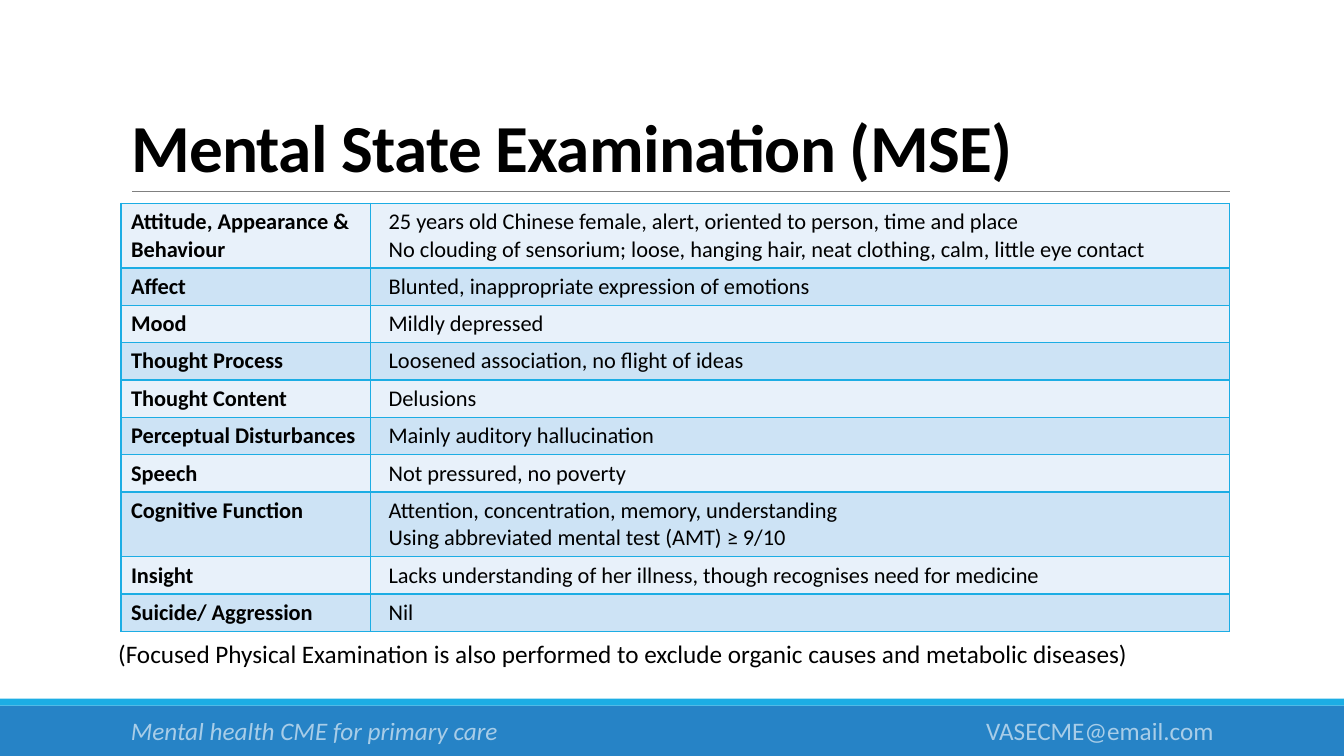
from lxml.etree import SubElement
from pptx import Presentation
from pptx.dml.color import RGBColor
from pptx.enum.shapes import MSO_CONNECTOR, MSO_SHAPE
from pptx.enum.text import MSO_ANCHOR, PP_ALIGN
from pptx.oxml.ns import qn
from pptx.util import Pt

HUES = {"ink": "000000", "white": "FFFFFF", "blue": "2683C6", "cyan": "1CADE4",
        "rule": "808080", "pale": "E8F1FA", "light": "CDE3F5"}

ROWS = [
    ("Attitude, Appearance & Behaviour",
     ["25 years old Chinese female, alert, oriented to person, time and place",
      "No clouding of sensorium; loose, hanging hair, neat clothing, calm, little eye contact"]),
    ("Affect", ["Blunted, inappropriate expression of emotions"]),
    ("Mood", ["Mildly depressed"]),
    ("Thought Process", ["Loosened association, no flight of ideas"]),
    ("Thought Content", ["Delusions"]),
    ("Perceptual Disturbances", ["Mainly auditory hallucination"]),
    ("Speech", ["Not pressured, no poverty"]),
    ("Cognitive Function",
     ["Attention, concentration, memory, understanding",
      "Using abbreviated mental test (AMT) ≥ 9/10"]),
    ("Insight", ["Lacks understanding of her illness, though recognises need for medicine"]),
    ("Suicide/ Aggression", ["Nil"]),
]


def hue(name):
    return RGBColor.from_string(HUES[name])


def write(para, text, color="ink", **style):
    run = para.add_run()
    run.text = text
    for key, val in {"name": "Calibri", "bold": False, **style}.items():
        setattr(run.font, key, val)
    run.font.color.rgb = hue(color)
    return run


def bar(slide, box, color):
    shape = slide.shapes.add_shape(MSO_SHAPE.RECTANGLE, *map(Pt, box))
    shape.shadow.inherit = False
    shape.fill.solid()
    shape.fill.fore_color.rgb = hue(color)
    shape.line.fill.background()


def label(slide, box, text, align=PP_ALIGN.LEFT, **style):
    frame = slide.shapes.add_textbox(*map(Pt, box)).text_frame
    frame.word_wrap = True
    para = frame.paragraphs[0]
    para.alignment = align
    return write(para, text, size=Pt(18), **style)


def footer(slide, box):
    x, y, w, h = box
    # Thin stripe above the main band
    bar(slide, (x, y + 5, w, h - 5), "blue")
    bar(slide, (x, y, w, 5), "cyan")
    # Translucent course name and address
    parts = [("Mental health CME for primary care", x + 86.4, 400, PP_ALIGN.LEFT, True),
             ("VASECME@email.com", x + 574, 300, PP_ALIGN.RIGHT, False)]
    for text, left, wide, align, slant in parts:
        run = label(slide, (left, y + 8.6, wide, 29), text, align,
                    color="white", italic=slant)
        tint = next(run.font._element.iter(qn("a:srgbClr")))
        SubElement(tint, qn("a:alpha"), val="60000")


def heading(slide, box):
    x, y, w, h = box
    title = slide.shapes.title
    for key, val in zip(("left", "top", "width", "height"), box):
        setattr(title, key, Pt(val))
    frame = title.text_frame
    frame.word_wrap = True
    frame.vertical_anchor = MSO_ANCHOR.BOTTOM
    para = frame.paragraphs[0]
    para.alignment = PP_ALIGN.LEFT
    para.line_spacing = 0.85
    run = write(para, "Mental State Examination (MSE)", size=Pt(48), bold=True)
    run.font._element.set("spc", "-50")
    # Rule under the title
    ends = (x + 8, y + h, x + w, y + h)
    rule = slide.shapes.add_connector(MSO_CONNECTOR.STRAIGHT, *map(Pt, ends))
    rule.line.color.rgb = hue("rule")
    rule.line.width = Pt(0.5)
    SubElement(rule._element.spPr, qn("a:effectLst"))


def border(cell):
    props = cell._tc.get_or_add_tcPr()
    for at, side in enumerate(("lnL", "lnR", "lnT", "lnB")):
        line = props.makeelement(qn("a:" + side), {"w": str(Pt(1))})
        props.insert(at, line)
        fill = SubElement(line, qn("a:solidFill"))
        SubElement(fill, qn("a:srgbClr"), val=HUES["cyan"])


def fill_in(cell, lines, color, bold, indent):
    cell.fill.solid()
    cell.fill.fore_color.rgb = hue(color)
    border(cell)
    frame = cell.text_frame
    for i, text in enumerate(lines):
        para = frame.add_paragraph() if i else frame.paragraphs[0]
        if indent:
            para._p.get_or_add_pPr().set("marL", str(Pt(indent)))
        write(para, text, size=Pt(16), bold=bold)


def findings(slide, box):
    x, y, w, h = box
    table = slide.shapes.add_table(len(ROWS), 2, *map(Pt, box)).table
    for key in ("first_row", "horz_banding"):
        setattr(table, key, False)
    for col, wide in zip(table.columns, (178, w - 178)):
        col.width = Pt(wide)
    # Every row is as tall as its lines plus the cell margins
    for i, (topic, notes) in enumerate(ROWS):
        table.rows[i].height = Pt(7.2 + 19.5 * len(notes))
        color = ("pale", "light")[i % 2]
        fill_in(table.cell(i, 0), [topic], color, True, 0)
        fill_in(table.cell(i, 1), notes, color, False, 6)


def main():
    deck = Presentation()
    deck.slide_width, deck.slide_height = Pt(960), Pt(540)
    slide = deck.slides.add_slide(deck.slide_layouts[5])
    footer(slide, (0, 499, 960, 41))
    heading(slide, (86.4, 22.5, 792, 114.3))
    findings(slide, (86.4, 145.2, 792, 306))
    # Closing remark
    label(slide, (77.3, 452.4, 832, 29),
          "(Focused Physical Examination is also performed to exclude "
          "organic causes and metabolic diseases)")
    deck.save("out.pptx")


if __name__ == "__main__":
    main()
